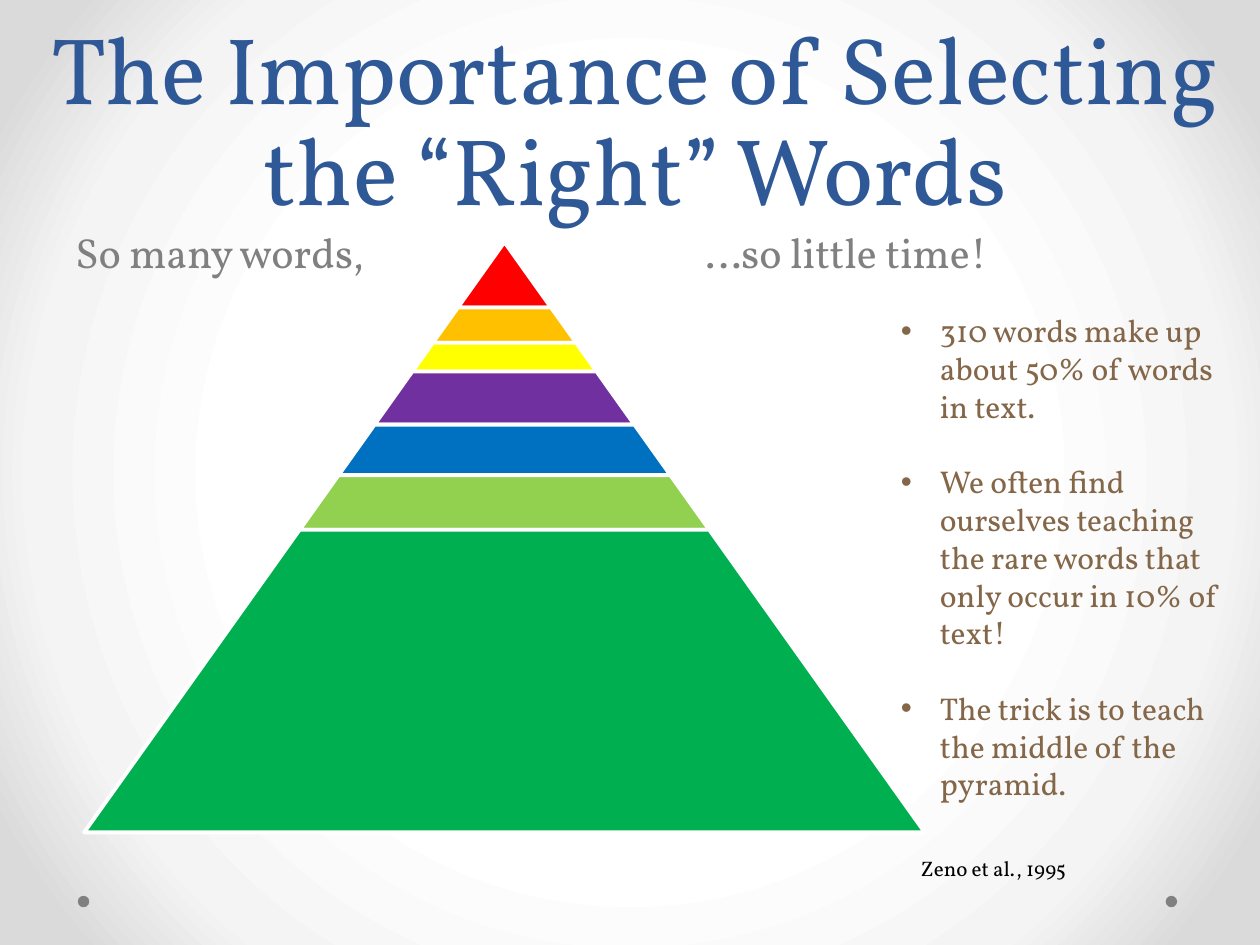
"""Build a slide with a word-frequency pyramid and teaching notes."""
from lxml import etree
from pptx import Presentation, util as u
from pptx.dml.color import RGBColor
from pptx.enum import shapes, text
from pptx.oxml import parse_xml
from pptx.oxml.ns import nsdecls, qn

FONT = "Vollkorn"
COLORS = {
    "title": "2F5897", "subtitle": "808080", "notes": "846648", "source": "000000",
    "dot": "808080", "border": "FFFFFF",
}
BACKDROP = [(50, "FFFFFF"), (76, "F4F4F4"), (92, "DADADA")]
TITLE = "The Importance of Selecting the “Right” Words"
SUBTITLE = "So many words,\t…so little time!"
SOURCE = "Zeno et al., 1995"
NOTES = [
    "310 words make up about 50% of words in text.",
    "We often find ourselves teaching the rare words that only occur in 10% of text!",
    "The trick is to teach the middle of the pyramid.",
]
LAYERS = [
    (1.32, "FF0000"), (0.71, "FFC000"), (0.58, "FFFF00"), (1.07, "7030A0"),
    (1.02, "0070C0"), (1.1, "92D050"), (6.1, "00B050"),
]
APEX_X, APEX_Y, SLOPE = 10.17, 4.88, 0.712
DOT_LEFTS, DOT_TOP, DOT_SIZE = (1.57, 23.5), 18.06, 0.23


def paint_background(page):
    stops = "".join(
        f'<a:gs pos="{pos * 1000}"><a:srgbClr val="{color}"/></a:gs>' for pos, color in BACKDROP
    )
    page.element.cSld.insert(0, parse_xml(
        f'<p:bg {nsdecls("p", "a")}><p:bgPr><a:gradFill rotWithShape="1">'
        f'<a:gsLst>{stops}</a:gsLst><a:path path="circle">'
        '<a:fillToRect l="50000" t="50000" r="50000" b="50000"/></a:path>'
        '</a:gradFill><a:effectLst/></p:bgPr></p:bg>'
    ))


def add_shape(page, kind, area, color):
    shape = page.shapes.add_shape(kind, *map(u.Cm, area))
    shape.shadow.inherit = False
    shape.fill.solid()
    shape.fill.fore_color.rgb = RGBColor.from_string(color)
    shape.line.fill.background()
    return shape


def add_text(page, area, content, size, color):
    box = page.shapes.add_textbox(*map(u.Cm, area))
    frame = box.text_frame
    frame.word_wrap = True
    frame.text = content
    for para in frame.paragraphs:
        for span in para.runs:
            span.font.name = FONT
            span.font.size = u.Pt(size)
            span.font.color.rgb = RGBColor.from_string(COLORS[color])
    return frame


def add_pyramid(page):
    depth = 0
    for height, color in LAYERS:
        top = APEX_Y + depth
        depth += height
        half = SLOPE * depth
        layer = add_shape(page, shapes.MSO_SHAPE.TRAPEZOID,
                          (APEX_X - half, top, 2 * half, height), color)
        layer.adjustments[0] = SLOPE
        layer.line.color.rgb = RGBColor.from_string(COLORS["border"])
        layer.line.width = u.Pt(2.25)


def add_notes(page):
    frame = add_text(page, (17.91, 6.15, 7.42, 10.26), "\n".join(NOTES), 18, "notes")
    for index, para in enumerate(frame.paragraphs):
        para.space_before = u.Pt(21.5 if index else 0)
        props = para._p.get_or_add_pPr()
        props.set("marL", str(u.Cm(0.79)))
        props.set("indent", str(-u.Cm(0.79)))
        etree.SubElement(props, qn("a:buFont"), typeface="Arial")
        etree.SubElement(props, qn("a:buChar"), char="•")


def main():
    deck = Presentation()
    deck.slide_width, deck.slide_height = u.Cm(25.4), u.Cm(19.05)
    page = deck.slides.add_slide(deck.slide_layouts[6])
    paint_background(page)
    for left in DOT_LEFTS:
        add_shape(page, shapes.MSO_SHAPE.OVAL, (left, DOT_TOP, DOT_SIZE, DOT_SIZE), COLORS["dot"])

    title = add_text(page, (0.64, 0.64, 24.33, 4.01), TITLE, 54, "title")
    title.vertical_anchor = text.MSO_ANCHOR.BOTTOM
    title.paragraphs[0].alignment = text.PP_ALIGN.CENTER
    title.paragraphs[0].line_spacing = u.Pt(58)

    subtitle = add_text(page, (1.27, 4.45, 22.86, 12.57), SUBTITLE, 24, "subtitle")
    tabs = etree.SubElement(subtitle.paragraphs[0]._p.get_or_add_pPr(), qn("a:tabLst"))
    etree.SubElement(tabs, qn("a:tab"), pos=str(u.Cm(12.7)), algn="l")

    add_text(page, (18.31, 17.12, 6.99, 0.76), SOURCE, 12, "source")
    add_pyramid(page)
    add_notes(page)
    deck.save("out.pptx")


if __name__ == "__main__":
    main()
